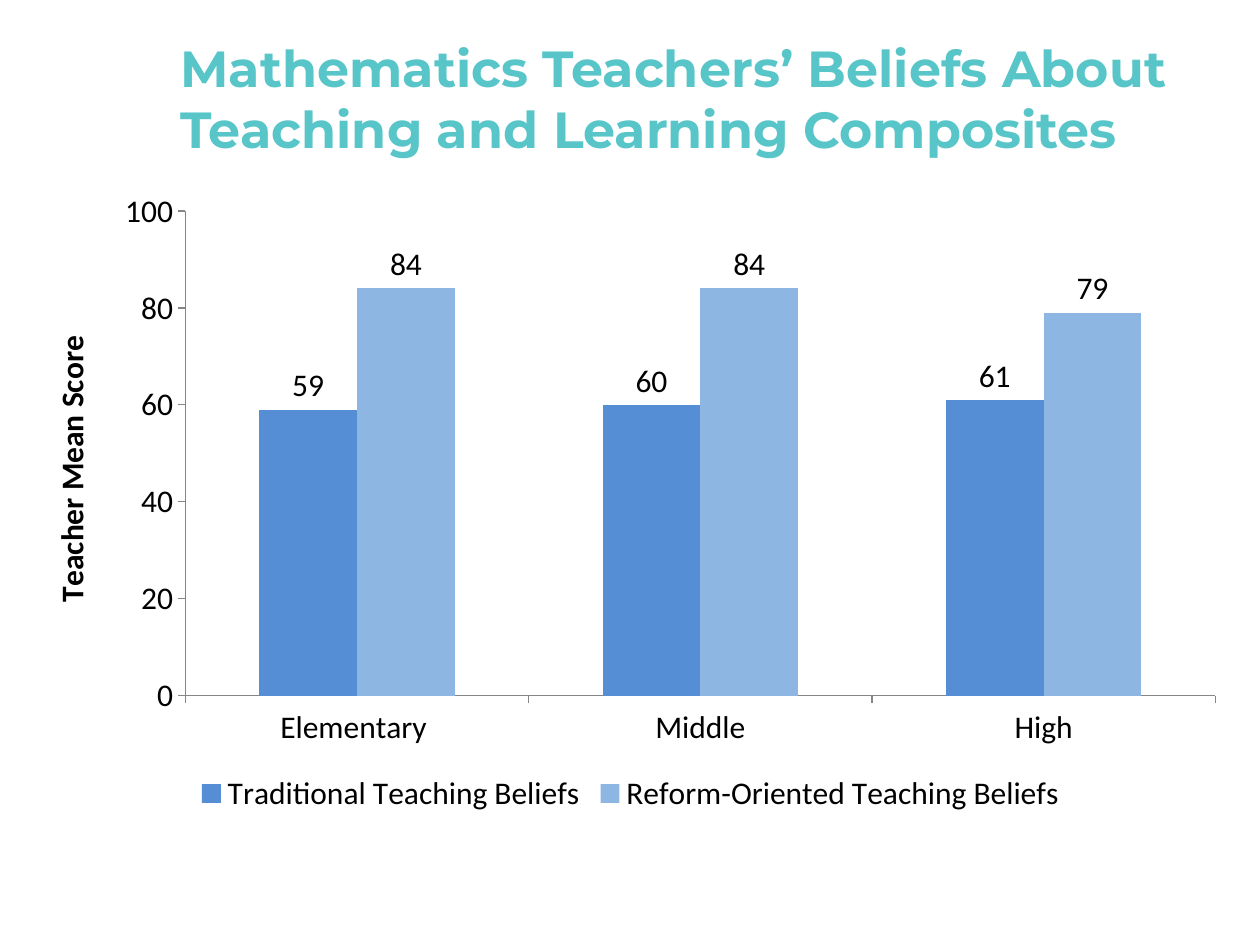
from pptx import Presentation
from pptx.chart.data import CategoryChartData
from pptx.dml.color import RGBColor
from pptx.enum import chart as ch, text as tx
from pptx.util import Cm, Pt

# Content
TITLE = "Mathematics Teachers’ Beliefs About Teaching and Learning Composites"
AXIS_TITLE = "Teacher Mean Score"
LEVELS = ["Elementary ", "Middle", "High"]
TEAL = RGBColor(0x58, 0xC5, 0xC9)
BLACK = RGBColor(0, 0, 0)
GREY = RGBColor(0x86, 0x86, 0x86)
BELIEFS = [
    ("Traditional Teaching Beliefs", (59, 60, 61), RGBColor(0x55, 0x8E, 0xD5)),
    ("Reform-Oriented Teaching Beliefs", (84, 84, 79), RGBColor(0x8E, 0xB6, 0xE3)),
]


def write(frame, words, *, size, font, color, bold=False, align=None):
    paragraph = frame.paragraphs[0]
    paragraph.alignment = align
    run = paragraph.add_run()
    run.text = words
    style(run.font, size=size, font=font, color=color, bold=bold)


def style(target, *, size=18, font="Calibri", color=BLACK, bold=False):
    target.size, target.name, target.bold = Pt(size), font, bold
    target.color.rgb = color


deck = Presentation()
deck.slide_width, deck.slide_height = Cm(25.4), Cm(19.05)
slide = deck.slides.add_slide(deck.slide_layouts[5])

# Title
heading = slide.shapes.title
heading.left, heading.top = Cm(3.38), Cm(0.76)
heading.width, heading.height = Cm(20.75), Cm(2.41)
heading.text_frame.word_wrap = True
heading.text_frame.auto_size = tx.MSO_AUTO_SIZE.NONE
heading.text_frame.vertical_anchor = tx.MSO_ANCHOR.MIDDLE
write(heading.text_frame, TITLE, size=29, font="Montserrat", color=TEAL,
      bold=True, align=tx.PP_ALIGN.LEFT)

# Chart of mean scores
scores = CategoryChartData(number_format="0")
scores.categories = LEVELS
for name, means, _ in BELIEFS:
    scores.add_series(name, means)
chart = slide.shapes.add_chart(
    ch.XL_CHART_TYPE.COLUMN_CLUSTERED,
    Cm(0.43), Cm(3.61), Cm(24.56), Cm(12.9), scores).chart
style(chart.font)
chart.has_title = False
chart.has_legend = True
chart.legend.position = ch.XL_LEGEND_POSITION.BOTTOM
chart.legend.include_in_layout = False

# Columns and their values
columns = chart.plots[0]
columns.gap_width, columns.overlap = 151, 0
columns.vary_by_categories = False
for series, (_, _, color) in zip(columns.series, BELIEFS):
    series.format.fill.solid()
    series.format.fill.fore_color.rgb = color
    series.invert_if_negative = False
    labels = series.data_labels
    labels.show_value = True
    labels.position = ch.XL_LABEL_POSITION.OUTSIDE_END
    style(labels.font)

# Axes
for axis in (chart.category_axis, chart.value_axis):
    axis.has_major_gridlines = False
    axis.major_tick_mark = ch.XL_TICK_MARK.OUTSIDE
    axis.minor_tick_mark = ch.XL_TICK_MARK.NONE
    axis.format.line.color.rgb = GREY
    axis.format.line.width = Pt(0.75)
    style(axis.tick_labels.font)
score_axis = chart.value_axis
score_axis.minimum_scale, score_axis.maximum_scale = 0, 100
score_axis.major_unit = 20
write(score_axis.axis_title.text_frame, AXIS_TITLE, size=18, font="Calibri",
      color=BLACK, bold=True)

deck.save("out.pptx")
